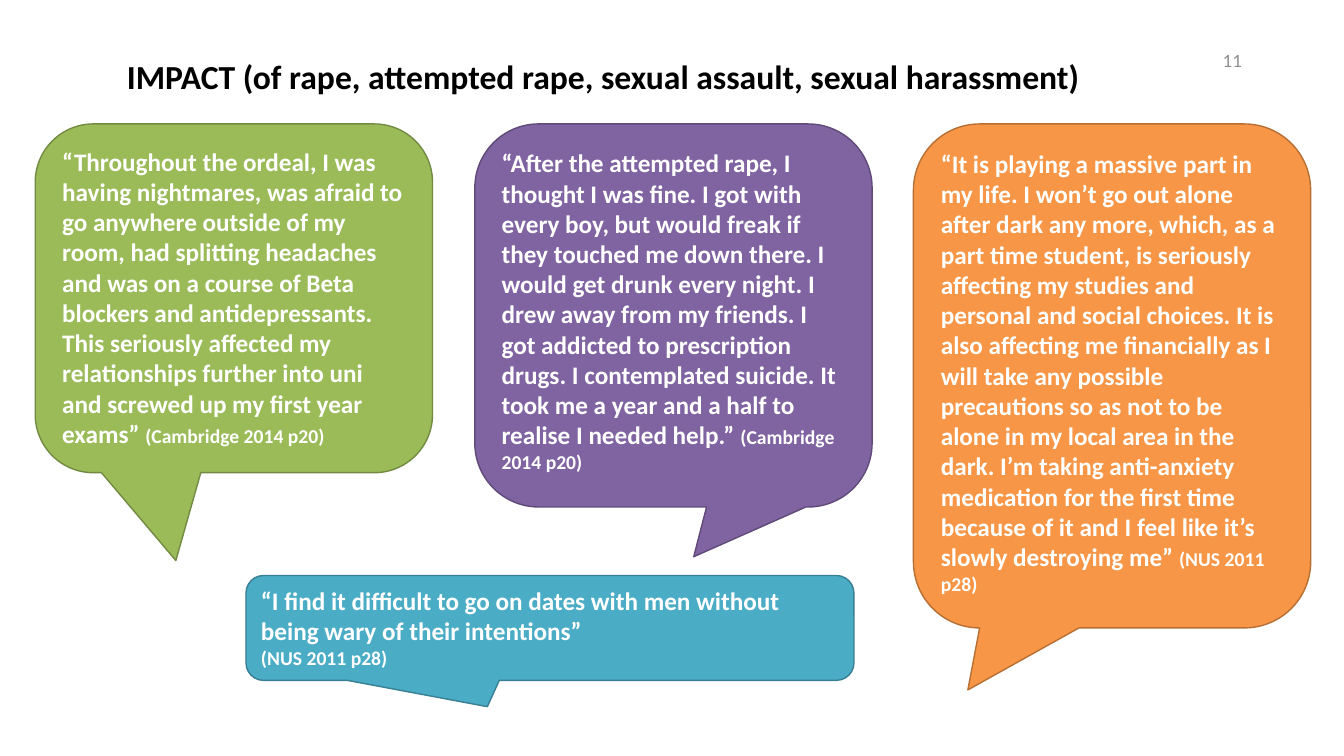
from dataclasses import dataclass

from pptx import Presentation
from pptx.dml.color import RGBColor
from pptx.enum.shapes import MSO_SHAPE
from pptx.enum.text import MSO_ANCHOR, MSO_AUTO_SIZE, PP_ALIGN
from pptx.util import Inches, Pt


@dataclass(frozen=True)
class Theme:
    font: str = "Calibri"
    number_font: str = "Lato"
    title_size: int = 24
    quote_size: int = 18
    citation_size: int = 14
    number_size: int = 12
    black: str = "000000"
    white: str = "FFFFFF"
    grey: str = "8C8C8C"
    green: tuple = ("9BBB59", "738A42")
    purple: tuple = ("8064A2", "5F4A78")
    teal: tuple = ("4BACC6", "377F92")
    orange: tuple = ("F79646", "B76F34")


theme = Theme()


def style_font(paragraph, name, color, bold):
    paragraph.font.name = name
    paragraph.font.bold = bold
    paragraph.font.color.rgb = RGBColor.from_string(color)


def add_label(slide, box, text, name, size, color, bold=False):
    label = slide.shapes.add_textbox(*[Inches(value) for value in box])
    label.text_frame.word_wrap = True
    paragraph = label.text_frame.paragraphs[0]
    paragraph.text = text
    style_font(paragraph, name, color, bold)
    paragraph.font.size = Pt(size)
    return label


presentation = Presentation()
presentation.slide_width = Inches(13.33)
presentation.slide_height = Inches(7.5)
slide = presentation.slides.add_slide(presentation.slide_layouts[6])

# Title
add_label(slide, (1.16, 0.51, 11.02, 0.5),
          "IMPACT (of rape, attempted rape, sexual assault, sexual harassment)",
          theme.font, theme.title_size, theme.black, bold=True)

# Quotes: box, pointer tip, colours, left inset, paragraphs of (text, size) runs
quote, citation = theme.quote_size, theme.citation_size
callouts = [
    ((0.35, 1.23, 3.94, 3.46), (-0.146, 0.752), theme.green, 0.1, [[
        ("“Throughout the ordeal, I was having nightmares, was afraid to go "
         "anywhere outside of my room, had splitting headaches and was on a "
         "course of Beta blockers and antidepressants. This seriously affected "
         "my relationships further into uni and screwed up my first year "
         "exams” ", quote),
        ("(Cambridge 2014 p20)", citation)]]),
    ((4.71, 1.23, 3.94, 3.8), (0.051, 0.63), theme.purple, 0.08, [[
        ("“After the attempted rape, I thought I was fine. I got with every "
         "boy, but would freak if they touched me down there. I would get drunk "
         "every night. I drew away from my friends. I got addicted to "
         "prescription drugs. I contemplated suicide. It took me a year and a "
         "half to realise I needed help.” ", quote),
        ("(Cambridge 2014 p20)", citation)]]),
    ((2.44, 5.71, 6.03, 1.04), (-0.103, 0.751), theme.teal, 0.1, [
        [("“I find it difficult to go on dates with men without being wary of "
          "their intentions”", quote)],
        [("(NUS 2011 p28)", citation)]]),
    ((9.06, 1.23, 3.94, 5), (-0.363, 0.623), theme.orange, 0.08, [[
        ("“It is playing a massive part in my life. I won’t go out alone after "
         "dark any more, which, as a part time student, is seriously affecting "
         "my studies and personal and social choices. It is also affecting me "
         "financially as I will take any possible precautions so as not to be "
         "alone in my local area in the dark. I’m taking anti-anxiety "
         "medication for the first time because of it and I feel like it’s "
         "slowly destroying me” ", quote),
        ("(NUS 2011 p28)", citation)]]),
]

for box, tip, (fill, line), left_inset, paragraphs in callouts:
    shape = slide.shapes.add_shape(MSO_SHAPE.ROUNDED_RECTANGULAR_CALLOUT,
                                   *[Inches(value) for value in box])
    shape.adjustments[0], shape.adjustments[1] = tip
    shape.shadow.inherit = False
    shape.fill.solid()
    shape.fill.fore_color.rgb = RGBColor.from_string(fill)
    shape.line.color.rgb = RGBColor.from_string(line)
    shape.line.width = Pt(1)

    frame = shape.text_frame
    frame.word_wrap = True
    frame.auto_size = MSO_AUTO_SIZE.SHAPE_TO_FIT_TEXT
    frame.vertical_anchor = MSO_ANCHOR.TOP
    frame.margin_left = Inches(left_inset)
    for index, runs in enumerate(paragraphs):
        paragraph = frame.add_paragraph() if index else frame.paragraphs[0]
        paragraph.alignment = PP_ALIGN.LEFT
        style_font(paragraph, theme.font, theme.white, bold=True)
        for text, size in runs:
            run = paragraph.add_run()
            run.text = text
            run.font.size = Pt(size)

# Slide number
number = add_label(slide, (9.42, 0.4, 3, 0.4), "11",
                   theme.number_font, theme.number_size, theme.grey)
number.text_frame.vertical_anchor = MSO_ANCHOR.MIDDLE
number.text_frame.paragraphs[0].alignment = PP_ALIGN.RIGHT

presentation.save("out.pptx")
